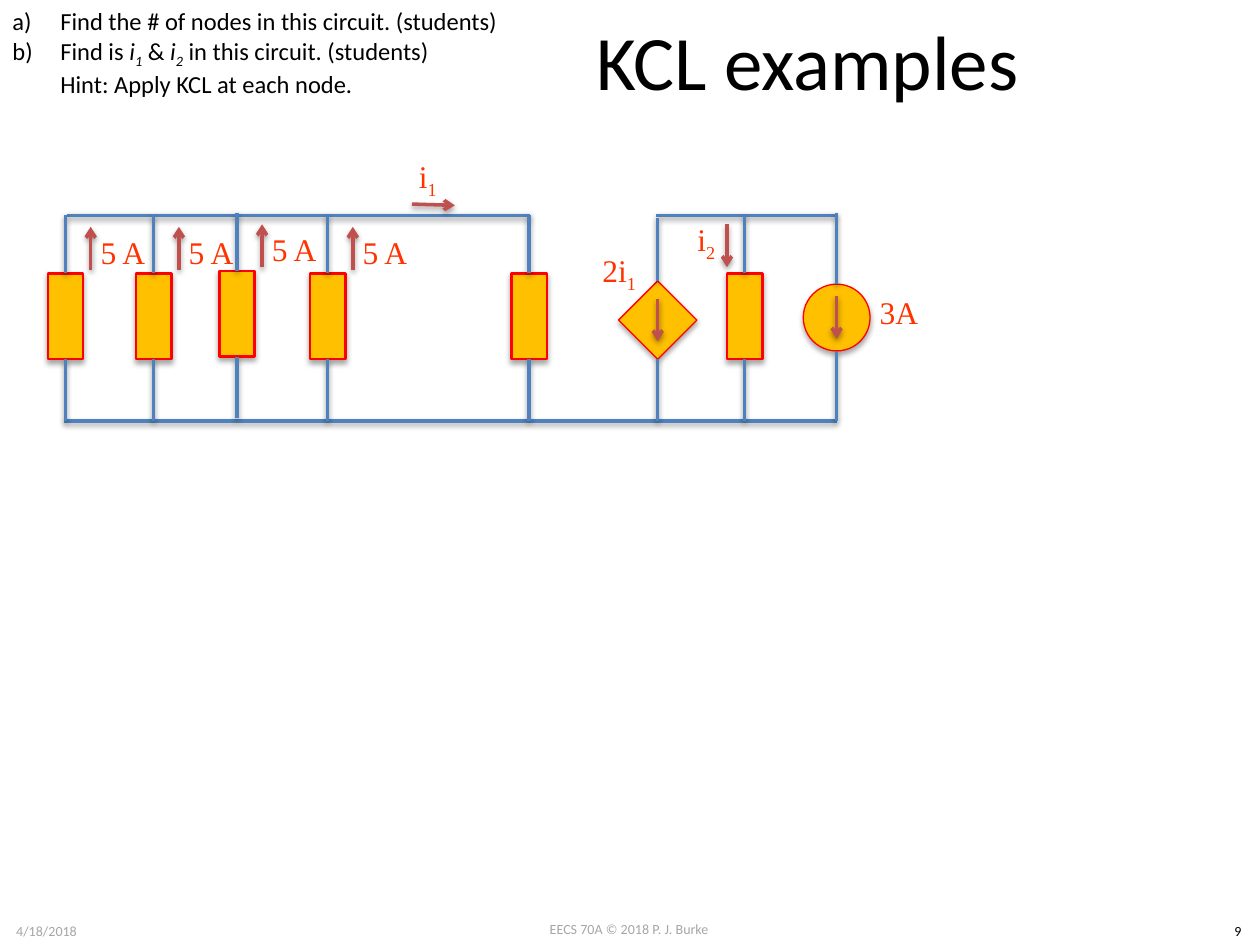
from lxml import etree
from pptx import Presentation
from pptx import util as u
from pptx.dml.color import RGBColor
from pptx.enum import shapes, text
from pptx.oxml.ns import qn

WIRE, ARROW, FILL, OUTLINE, LABEL = "4F81BD", "C0504D", "FFC000", "FF0000", "FF3300"
TOP, BOTTOM = 1.71, 3.34  # heights of the two rails


def paint(color_format, value):
    color_format.rgb = RGBColor.from_string(value)


def add_shadow(element, distance, opacity):
    properties = element.spPr
    effects = properties.find(qn("a:effectLst"))
    if effects is None:
        effects = etree.SubElement(properties, qn("a:effectLst"))
    shadow = etree.SubElement(effects, qn("a:outerShdw"), blurRad="40000",
                              dist=str(distance), dir="5400000", rotWithShape="0")
    color = etree.SubElement(shadow, qn("a:srgbClr"), val="000000")
    etree.SubElement(color, qn("a:alpha"), val=str(opacity * 1000))


def write(paragraph, content, size=18, font="Times New Roman", color=LABEL,
          align=text.PP_ALIGN.CENTER, numbered=False):
    """Content is a list of (text, style); style may hold i (italic) and s (subscript)."""
    paragraph.alignment = align
    if numbered:
        properties = paragraph._p.get_or_add_pPr()
        properties.set("marL", str(u.Inches(0.38)))
        properties.set("indent", str(-u.Inches(0.38)))
        etree.SubElement(properties, qn("a:buFont"), typeface="+mj-lt")
        etree.SubElement(properties, qn("a:buAutoNum"), type="alphaLcParenR")
    for words, style in content:
        if words == "\n":
            paragraph.add_line_break()
            continue
        run = paragraph.add_run()
        run.text = words
        run.font.size, run.font.name = u.Pt(size), font
        paint(run.font.color, color)
        if "i" in style:
            run.font.italic = True
        if "s" in style:
            run.font._element.set("baseline", "-25000")


class CircuitSlide:
    def __init__(self, slide):
        self.slide = slide

    def text_box(self, box, *paragraphs, anchor=text.MSO_ANCHOR.TOP, wrap=True, **style):
        shape = self.slide.shapes.add_textbox(*map(u.Inches, box))
        frame = shape.text_frame
        frame.word_wrap, frame.vertical_anchor = wrap, anchor
        for index, content in enumerate(paragraphs):
            paragraph = frame.add_paragraph() if index else frame.paragraphs[0]
            write(paragraph, content, **style)

    def label(self, left, top, words, subscript="", width=0.77, height=0.61):
        content = [(words, "")] + ([(subscript, "s")] if subscript else [])
        self.text_box((left, top, width, height), content, anchor=text.MSO_ANCHOR.MIDDLE)

    def line(self, x1, y1, x2, y2, color=WIRE):
        connector = self.slide.shapes.add_connector(
            shapes.MSO_CONNECTOR.STRAIGHT, *map(u.Inches, (x1, y1, x2, y2)))
        connector.line.width = u.Pt(2)
        paint(connector.line.color, color)
        add_shadow(connector._element, 20000, 38)
        return connector

    def arrow(self, x1, y1, x2, y2):
        connector = self.line(x1, y1, x2, y2, ARROW)
        outline = connector._element.spPr.find(qn("a:ln"))
        etree.SubElement(outline, qn("a:tailEnd"), type="arrow")

    def component(self, kind, x, y, width, height, rotation, line_width):
        shape = self.slide.shapes.add_shape(kind, *map(
            u.Inches, (x - width / 2, y - height / 2, width, height)))
        shape.rotation = rotation
        shape.fill.solid()
        paint(shape.fill.fore_color, FILL)
        shape.line.width = u.Pt(line_width)
        paint(shape.line.color, OUTLINE)
        shape.shadow.inherit = False
        add_shadow(shape._element, 23000, 35)

    def branch(self, x, shift=0.0, current=None):
        """A resistor between the rails, with an upward current if one is named."""
        self.component(shapes.MSO_SHAPE.RECTANGLE, x, 2.51 + shift, 0.68, 0.28, 90, 1.5)
        self.line(x, BOTTOM + shift, x, 2.85 + shift)
        self.line(x, 2.17 + shift, x, TOP + shift)
        if current:
            self.arrow(x + 0.2, 2.14 + shift, x + 0.2, 1.8 + shift)
            self.label(x + 0.07, 1.69 + shift, current)

    def source(self, kind, x, y, size, rotation, reach, top):
        """A current source pointing down, with its leads."""
        self.component(kind, x, y, size, size, rotation, 0.75)
        self.line(x, y + reach, x, BOTTOM)
        self.line(x, top, x, y - reach)
        self.arrow(x, y - 0.17, x, y + 0.17)


def main():
    presentation = Presentation()
    presentation.slide_width, presentation.slide_height = u.Inches(10), u.Inches(7.5)
    circuit = CircuitSlide(presentation.slides.add_slide(presentation.slide_layouts[6]))

    # Footer
    for box, words, color in (
            ((3.83, 7.26, 2.33, 0.24), "EECS 70A © 2018 P. J. Burke", "A6A6A6"),
            ((0, 7.27, 0.74, 0.24), "4/18/2018", "A6A6A6"),
            ((9.65, 7.27, 0.35, 0.24), "9", "000000")):
        circuit.text_box(box, [(words, "")], size=8, font="Calibri", color=color)

    # Title and questions
    circuit.text_box((3.01, 0, 6.8, 0.95), [("KCL examples", "")], size=44,
                     font="Calibri", color="000000", anchor=text.MSO_ANCHOR.MIDDLE)
    circuit.text_box(
        (0, 0, 4.08, 0.81),
        [("Find the # of nodes in this circuit. (students)", "")],
        [("Find is ", ""), ("i", "i"), ("1", "is"), (" & ", ""), ("i", "i"), ("2", "is"),
         (" in this circuit. (students) ", ""), ("\n", ""),
         ("Hint: Apply KCL at each node.", "")],
        size=14, font="Calibri", color="000000", wrap=False,
        align=text.PP_ALIGN.LEFT, numbered=True)

    # Rails
    circuit.line(0.51, BOTTOM, 6.64, BOTTOM)
    circuit.line(5.21, TOP, 6.64, TOP)
    circuit.line(0.53, TOP, 4.21, TOP)

    # Resistor branches
    for x, shift, current in ((4.2, 0, None), (5.91, 0, None), (2.6, 0, "5 A"),
                              (1.88, -0.02, "5 A"), (1.22, 0, "5 A"), (0.52, 0, "5 A")):
        circuit.branch(x, shift, current)

    # Current sources
    circuit.source(shapes.MSO_SHAPE.RECTANGLE, 5.22, 2.54, 0.44, 225, 0.31, 1.73)
    circuit.source(shapes.MSO_SHAPE.OVAL, 6.64, 2.52, 0.53, 180, 0.27, 1.69)
    circuit.label(4.53, 1.86, "2i", "1")
    circuit.label(6.75, 2.17, "3A")

    # Unknown currents
    circuit.label(3.09, 1.18, "i", "1", width=0.61, height=0.48)
    circuit.arrow(3.27, 1.62, 3.61, 1.63)
    circuit.label(5.3, 1.68, "i", "2", width=0.61, height=0.48)
    circuit.arrow(5.77, 1.78, 5.77, 2.12)

    presentation.save("out.pptx")


if __name__ == "__main__":
    main()
